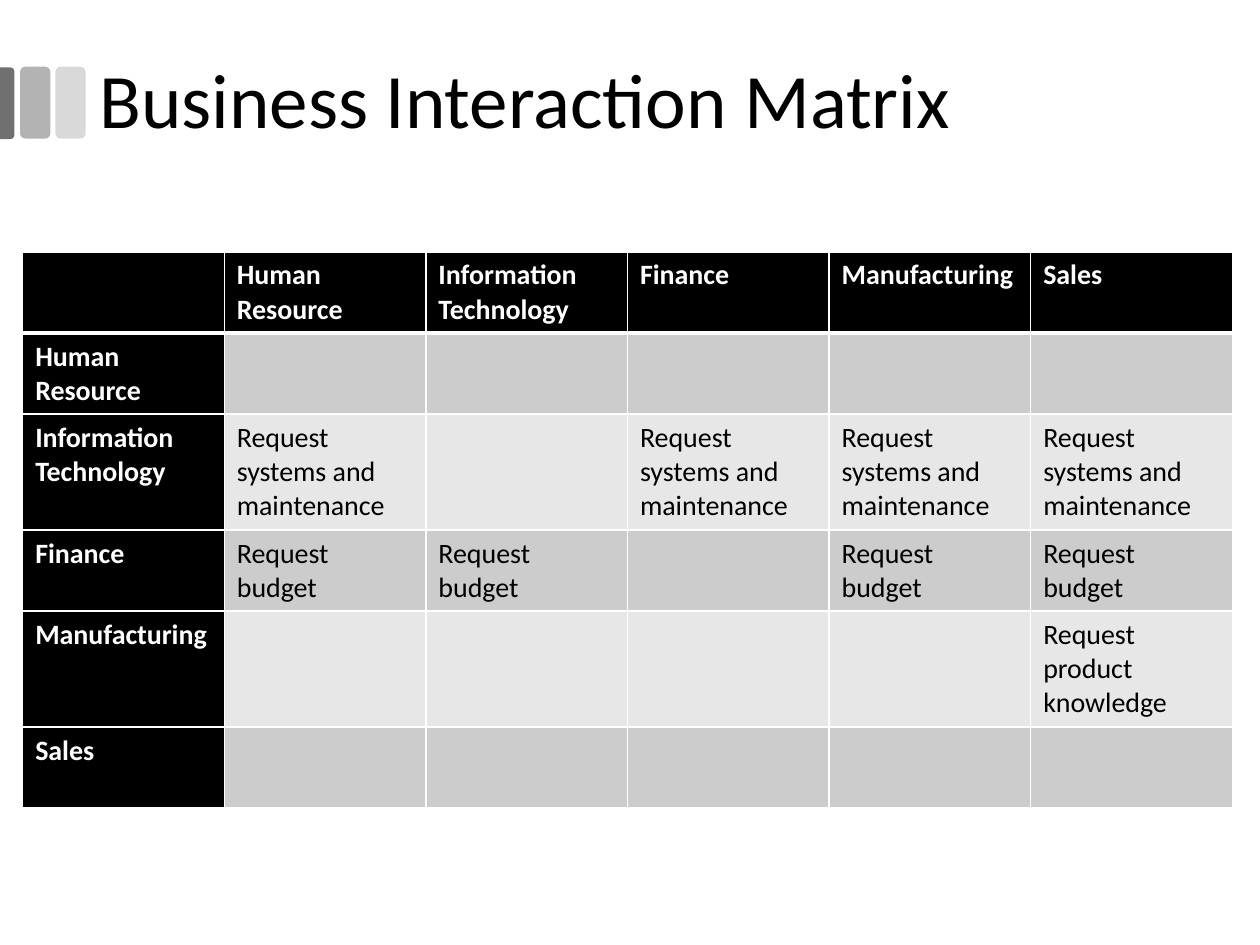
from lxml import etree
from pptx import Presentation
from pptx.dml.color import RGBColor
from pptx.enum.shapes import MSO_SHAPE as Shape
from pptx.enum.text import MSO_ANCHOR as Anchor, MSO_AUTO_SIZE as AutoSize, PP_ALIGN as Align
from pptx.oxml.ns import qn
from pptx.util import Inches, Pt

TITLE = "Business Interaction Matrix"
DEPARTMENTS = ["Human Resource", "Information Technology", "Finance", "Manufacturing", "Sales"]
SYSTEMS = "Request systems and maintenance"
BUDGET = "Request budget"
REQUESTS = {
    "Information Technology": {
        name: SYSTEMS for name in DEPARTMENTS if name != "Information Technology"
    },
    "Finance": {name: BUDGET for name in DEPARTMENTS if name != "Finance"},
    "Manufacturing": {"Sales": "Request product knowledge"},
}
BARS = [
    (Shape.ROUNDED_RECTANGLE, 0.44, 0.53, 0.24, 0.57, 0, "D9D9D9", [0.17]),
    (Shape.ROUNDED_RECTANGLE, 0.16, 0.53, 0.24, 0.57, 0, "B3B3B3", [0.17]),
    (Shape.ROUND_2_SAME_RECTANGLE, -0.23, 0.76, 0.57, 0.12, 90, "707070", [0.29, 0]),
]
COLUMN_WIDTH = 1.6
ROW_HEIGHTS = [0.64, 0.64, 0.92, 0.64, 0.92, 0.64]
THEME = {
    "font": "Calibri",
    "title_size": 44,
    "cell_size": 16,
    "dark": "000000",
    "light": "FFFFFF",
    "bands": ["CCCCCC", "E7E7E7"],
    "rule": 1,
    "header_rule": 3,
}


def write_text(frame, text, size, color, bold=False):
    paragraph = frame.paragraphs[0]
    paragraph.text = text
    paragraph.alignment = Align.LEFT
    font = paragraph.font
    font.name = THEME["font"]
    font.size = Pt(size)
    font.bold = bold
    font.color.rgb = RGBColor.from_string(color)
    return paragraph


def fill_with(item, color):
    item.fill.solid()
    item.fill.fore_color.rgb = RGBColor.from_string(color)


def add_bar(slide, kind, left, top, width, height, rotation, color, adjustments):
    shape = slide.shapes.add_shape(kind, Inches(left), Inches(top), Inches(width), Inches(height))
    shape.rotation = rotation
    shape.shadow.inherit = False
    shape.line.fill.background()
    fill_with(shape, color)
    for index, value in enumerate(adjustments):
        shape.adjustments[index] = value


def set_borders(cell, top, bottom):
    properties = cell._tc.get_or_add_tcPr()
    widths = {"lnL": THEME["rule"], "lnR": THEME["rule"], "lnT": top, "lnB": bottom}
    for side, width in widths.items():
        line = etree.SubElement(properties, qn(f"a:{side}"), w=str(Pt(width)))
        solid = etree.SubElement(line, qn("a:solidFill"))
        etree.SubElement(solid, qn("a:srgbClr"), val=THEME["light"])


def add_title(slide):
    title = slide.shapes.title
    title.left, title.top = Inches(0.69), Inches(0.17)
    title.width, title.height = Inches(8.62), Inches(1.31)
    frame = title.text_frame
    frame.word_wrap = True
    frame.auto_size = AutoSize.NONE
    frame.vertical_anchor = Anchor.MIDDLE
    paragraph = write_text(frame, TITLE, THEME["title_size"], THEME["dark"])
    paragraph.line_spacing = 0.9


def add_matrix(slide):
    rows = [["", *DEPARTMENTS]]
    for owner in DEPARTMENTS:
        requests = REQUESTS.get(owner, {})
        rows.append([owner, *(requests.get(name, "") for name in DEPARTMENTS)])
    table = slide.shapes.add_table(
        len(rows), len(rows[0]), Inches(0.18), Inches(2),
        Inches(COLUMN_WIDTH * len(rows[0])), Inches(sum(ROW_HEIGHTS)),
    ).table
    for column in table.columns:
        column.width = Inches(COLUMN_WIDTH)
    for row_index, (values, height) in enumerate(zip(rows, ROW_HEIGHTS)):
        table.rows[row_index].height = Inches(height)
        top = THEME["header_rule"] if row_index == 1 else THEME["rule"]
        bottom = THEME["header_rule"] if row_index == 0 else THEME["rule"]
        for column_index, value in enumerate(values):
            cell = table.cell(row_index, column_index)
            heading = row_index == 0 or column_index == 0
            set_borders(cell, top, bottom)
            fill_with(cell, THEME["dark"] if heading else THEME["bands"][(row_index - 1) % 2])
            color = THEME["light"] if heading else THEME["dark"]
            write_text(cell.text_frame, value, THEME["cell_size"], color, bold=heading)


def main():
    presentation = Presentation()
    presentation.slide_width, presentation.slide_height = Inches(10), Inches(7.5)
    slide = presentation.slides.add_slide(presentation.slide_layouts[5])
    fill_with(slide.background, THEME["light"])
    for bar in BARS:
        add_bar(slide, *bar)
    add_title(slide)
    add_matrix(slide)
    presentation.save("out.pptx")


if __name__ == "__main__":
    main()
